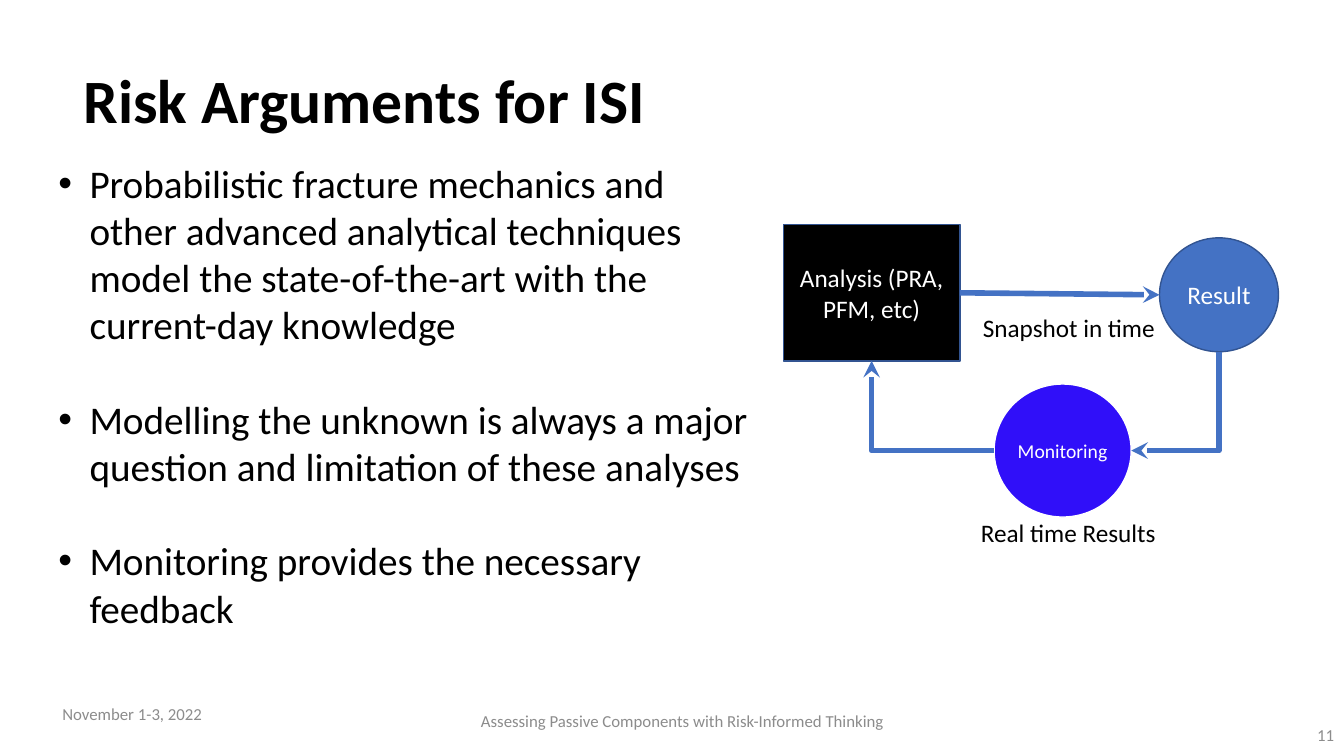
import dataclasses

import pptx
import pptx.dml.color
import pptx.enum.shapes
import pptx.enum.text
import pptx.oxml.ns
import pptx.util
from lxml import etree

BLACK = pptx.dml.color.RGBColor(0x00, 0x00, 0x00)
WHITE = pptx.dml.color.RGBColor(0xFF, 0xFF, 0xFF)
GRAY = pptx.dml.color.RGBColor(0x8C, 0x8C, 0x8C)
BLUE = pptx.dml.color.RGBColor(0x44, 0x72, 0xC4)
DARK_BLUE = pptx.dml.color.RGBColor(0x32, 0x54, 0x91)
VIOLET = pptx.dml.color.RGBColor(0x30, 0x0F, 0xF9)

FONT = "Calibri"
CELL = pptx.util.Inches(0.1)  # side of one square of the layout grid
LEFT, CENTER, RIGHT = (pptx.enum.text.PP_ALIGN.LEFT, pptx.enum.text.PP_ALIGN.CENTER,
                       pptx.enum.text.PP_ALIGN.RIGHT)
TOP, MIDDLE = pptx.enum.text.MSO_ANCHOR.TOP, pptx.enum.text.MSO_ANCHOR.MIDDLE
SHAPES = pptx.enum.shapes.MSO_SHAPE
CONNECTORS = pptx.enum.shapes.MSO_CONNECTOR

BULLETS = [
    "Probabilistic fracture mechanics and other advanced analytical techniques "
    "model the state-of-the-art with the current-day knowledge",
    "Modelling the unknown is always a major question and limitation of these analyses",
    "Monitoring provides the necessary feedback",
]


@dataclasses.dataclass
class Box:
    """A rectangle in grid cells."""
    left: float
    top: float
    width: float
    height: float

    def inner(self, left, top, width, height):
        return Box(self.left + left, self.top + top, width, height)

    def point(self, across, down):
        """Point at the given shares of the width and height."""
        return self.left + across * self.width, self.top + down * self.height

    def lengths(self):
        return [round(n * CELL) for n in (self.left, self.top, self.width, self.height)]


def write(frame, texts, size, color=BLACK, bold=False, align=LEFT, anchor=MIDDLE,
          wrap=True, line_spacing=None, gap=0, bullet=False, inset=None):
    frame.word_wrap = wrap
    frame.vertical_anchor = anchor
    if inset is not None:
        frame.margin_left = frame.margin_right = pptx.util.Inches(inset)
        frame.margin_top = frame.margin_bottom = pptx.util.Inches(inset)
    for index, text in enumerate(texts):
        paragraph = frame.paragraphs[0] if index == 0 else frame.add_paragraph()
        if bullet:
            indent = pptx.util.Inches(0.31)
            properties = paragraph._p.get_or_add_pPr()
            properties.set("marL", str(indent))
            properties.set("indent", str(-indent))
            etree.SubElement(properties, pptx.oxml.ns.qn("a:buFont"), typeface="Arial")
            etree.SubElement(properties, pptx.oxml.ns.qn("a:buChar"), char="•")
        paragraph.alignment = align
        if line_spacing:
            paragraph.line_spacing = line_spacing
        if index and gap:
            paragraph.space_before = pptx.util.Pt(gap)
        run = paragraph.add_run()
        run.text = text
        run.font.name = FONT
        run.font.size = pptx.util.Pt(size)
        run.font.bold = bold
        run.font.color.rgb = color


def add_text(slide, box, *texts, **text_format):
    write(slide.shapes.add_textbox(*box.lengths()).text_frame, texts, **text_format)


def add_node(slide, box, kind, text, fill, outline, size=18, inset=None):
    shape = slide.shapes.add_shape(kind, *box.lengths())
    shape.shadow.inherit = False
    shape.fill.solid()
    shape.fill.fore_color.rgb = fill
    shape.line.color.rgb = outline
    shape.line.width = pptx.util.Pt(1)
    write(shape.text_frame, [text], size, color=WHITE, align=CENTER, inset=inset)


def add_arrow(slide, start, end, quarter_turns=None):
    """Straight arrow, or one with a single corner when quarter_turns is given."""
    (x1, y1), (x2, y2) = start, end
    kind = CONNECTORS.STRAIGHT
    if quarter_turns is not None:
        kind = CONNECTORS.ELBOW
        width, height = abs(x2 - x1), abs(y2 - y1)
        if quarter_turns % 2:
            width, height = height, width
        middle_x, middle_y = (x1 + x2) / 2, (y1 + y2) / 2
        x1, x2 = middle_x - width / 2, middle_x + width / 2
        y1, y2 = middle_y - height / 2, middle_y + height / 2
    arrow = slide.shapes.add_connector(kind, *[round(n * CELL) for n in (x1, y1, x2, y2)])
    arrow.line.color.rgb = BLUE
    arrow.line.width = pptx.util.Pt(4)
    properties = arrow._element.spPr
    if quarter_turns is not None:
        properties.find(pptx.oxml.ns.qn("a:xfrm")).set("rot", str(quarter_turns * 5400000))
        properties.find(pptx.oxml.ns.qn("a:prstGeom")).set("prst", "bentConnector2")
    etree.SubElement(arrow.line._get_or_add_ln(), pptx.oxml.ns.qn("a:tailEnd"), type="stealth")
    etree.SubElement(properties, pptx.oxml.ns.qn("a:effectLst"))


def add_feedback_loop(slide, box):
    analysis = box.inner(0, 0, 17.5, 13.5)
    result = box.inner(37.3, 1.3, 11.8, 11.3)
    monitoring = box.inner(20.9, 15.8, 13.6, 13.2)

    add_node(slide, monitoring, SHAPES.OVAL, "Monitoring", VIOLET, WHITE, size=14, inset=0.01)
    add_node(slide, analysis, SHAPES.RECTANGLE, "Analysis (PRA, PFM, etc)", BLACK, DARK_BLUE)
    add_node(slide, result, SHAPES.FLOWCHART_CONNECTOR, "Result", BLUE, DARK_BLUE)

    add_arrow(slide, analysis.point(1, 0.5), result.point(0, 0.5))
    add_arrow(slide, result.point(0.5, 1), monitoring.point(1, 0.5), quarter_turns=1)
    add_arrow(slide, monitoring.point(0, 0.5), analysis.point(0.5, 1), quarter_turns=2)

    add_text(slide, box.inner(18.8, 8.2, 19.3, 4), "Snapshot in time",
             size=18, anchor=TOP, wrap=False)
    add_text(slide, box.inner(18.6, 28.5, 19.5, 4), "Real time Results",
             size=18, anchor=TOP, wrap=False)


def add_footer(slide, box):
    add_text(slide, box.inner(5.2, 0, 30, 4), "November 1-3, 2022", size=12, color=GRAY)
    add_text(slide, box.inner(44.2, 0.7, 47, 4),
             "Assessing Passive Components with Risk-Informed Thinking",
             size=12, color=GRAY, align=CENTER)
    add_text(slide, box.inner(109, 2.6, 24.3, 2.9), "11", size=12, color=GRAY, align=RIGHT)


def main():
    presentation = pptx.Presentation()
    presentation.slide_width = pptx.util.Inches(13.33)
    presentation.slide_height = pptx.util.Inches(7.5)
    slide = presentation.slides.add_slide(presentation.slide_layouts[6])

    add_text(slide, Box(7.3, 3, 115, 14.5), "Risk Arguments for ISI",
             size=44, bold=True, line_spacing=0.9)
    add_text(slide, Box(4.8, 15.3, 71.6, 48.1), *BULLETS,
             size=28, anchor=TOP, bullet=True, gap=34)
    add_feedback_loop(slide, Box(77.7, 22.3, 49.1, 32.5))
    add_footer(slide, Box(0, 68.8, 133.3, 6.2))

    presentation.save("out.pptx")


if __name__ == "__main__":
    main()
